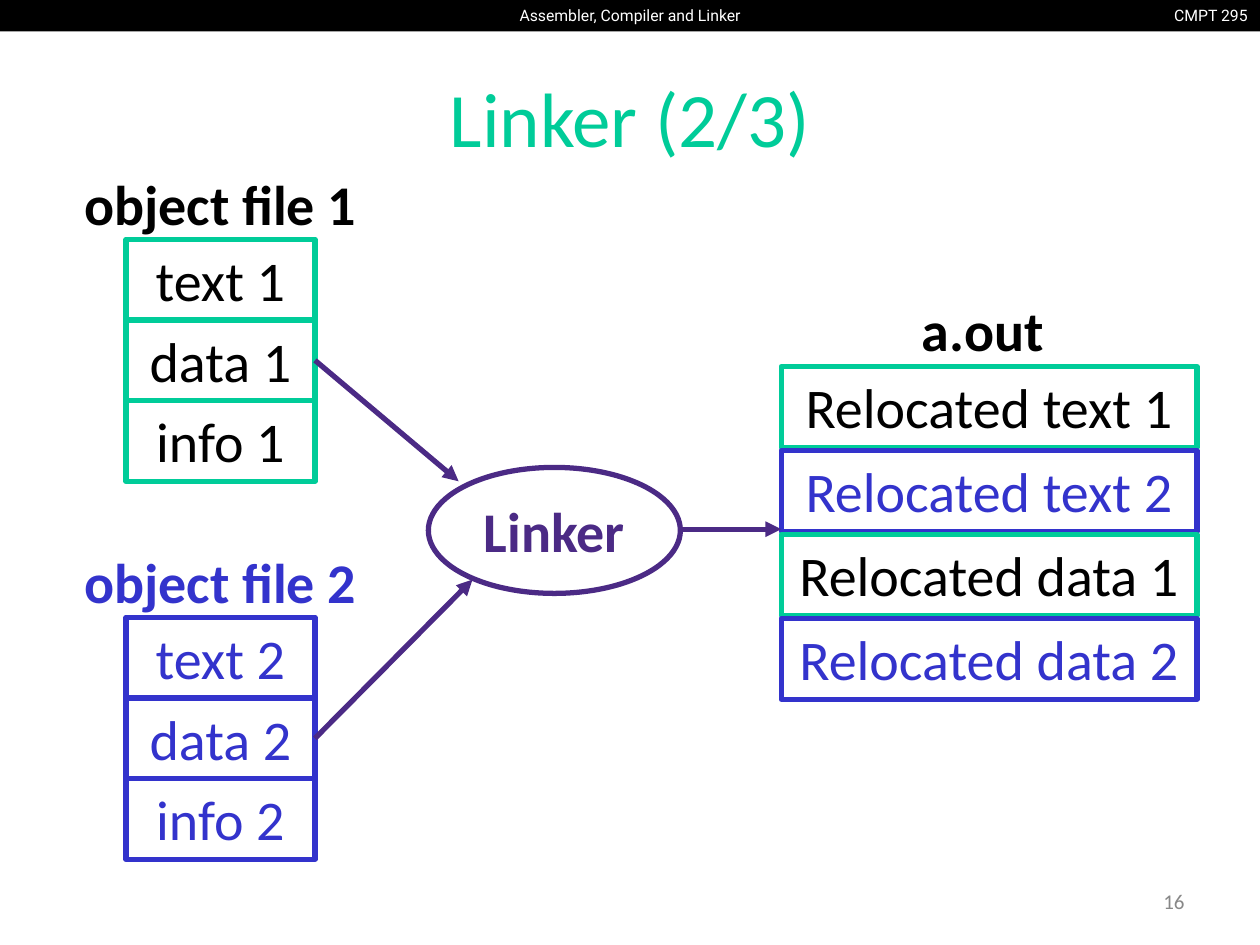
from lxml import etree
from pptx import Presentation
from pptx.dml.color import RGBColor
from pptx.enum.shapes import MSO_CONNECTOR, MSO_SHAPE
from pptx.enum.text import MSO_ANCHOR, PP_ALIGN
from pptx.oxml.ns import qn
from pptx.util import Inches, Pt

RECTANGLE, OVAL = MSO_SHAPE.RECTANGLE, MSO_SHAPE.OVAL
STRAIGHT = MSO_CONNECTOR.STRAIGHT
TOP, MIDDLE = MSO_ANCHOR.TOP, MSO_ANCHOR.MIDDLE
CENTER, RIGHT = PP_ALIGN.CENTER, PP_ALIGN.RIGHT

BLACK = RGBColor(0x00, 0x00, 0x00)
WHITE = RGBColor(0xFF, 0xFF, 0xFF)
GREEN = RGBColor(0x00, 0xCC, 0x99)
BLUE = RGBColor(0x33, 0x33, 0xCC)
PURPLE = RGBColor(0x4B, 0x2A, 0x85)
GRAY = RGBColor(0x88, 0x88, 0x88)

ROW_HEIGHT = 0.64
RIGHT_SIDE = 3

prs = Presentation()
prs.slide_width, prs.slide_height = Inches(10), Inches(7.5)
slide = prs.slides.add_slide(prs.slide_layouts[5])
shapes = slide.shapes


def write(shape, text, color, size=32, bold=False, align=CENTER, anchor=TOP,
          font="Calibri", wrap=True):
    frame = shape.text_frame
    frame.word_wrap = wrap
    frame.vertical_anchor = anchor
    paragraph = frame.paragraphs[0]
    paragraph.alignment = align
    run = paragraph.add_run()
    run.text = text
    run.font.name, run.font.size, run.font.bold = font, Pt(size), bold
    run.font.color.rgb = color


def add_outlined(kind, left, top, width, height, line_color):
    shape = shapes.add_shape(kind, Inches(left), Inches(top), Inches(width), Inches(height))
    shape.shadow.inherit = False
    shape.fill.background()
    shape.line.color.rgb = line_color
    shape.line.width = Pt(3)
    return shape


# Course header
header_bar = shapes.add_shape(RECTANGLE, 0, 0, Inches(10), Inches(0.25))
header_bar.shadow.inherit = False
header_bar.fill.solid()
header_bar.fill.fore_color.rgb = BLACK
header_bar.line.fill.background()

for text, left, width, height, align in [
    ("CMPT 295", 9.19, 0.81, 0.4, RIGHT),
    ("Assembler, Compiler and Linker", 4, 2, 0.25, CENTER),
]:
    header = shapes.add_textbox(Inches(left), 0, Inches(width), Inches(height))
    write(header, text, WHITE, size=9, align=align, font="Roboto", wrap=False)

# Title
title = shapes.title
title.left, title.top = Inches(0.5), Inches(0.3)
title.width, title.height = Inches(9), Inches(1.25)
write(title, "Linker (2/3)", GREEN, size=44, anchor=MIDDLE)

# Object files: a heading above three stacked sections
data_sections = []
for number, heading_top, line_color, text_color in [
    (1, 1.3, GREEN, BLACK),
    (2, 4.3, BLUE, BLUE),
]:
    heading = shapes.add_textbox(Inches(0.5), Inches(heading_top), Inches(2.5), Inches(ROW_HEIGHT))
    write(heading, f"object file {number}", text_color, bold=True)
    for row, name in enumerate(["text", "data", "info"]):
        section = add_outlined(RECTANGLE, 1, heading_top + 0.6 + row * ROW_HEIGHT,
                               1.5, ROW_HEIGHT, line_color)
        write(section, f"{name} {number}", text_color)
        if name == "data":
            data_sections.append(section)

# Linker
linker = add_outlined(OVAL, 3.4, 3.71, 2, 1, PURPLE)
write(linker, "Linker", PURPLE, bold=True, anchor=MIDDLE)

# Executable: sections of both files, interleaved
heading = shapes.add_textbox(Inches(6.2), Inches(2.3), Inches(3.2), Inches(ROW_HEIGHT))
write(heading, "a.out", BLACK, bold=True)
for row, (name, line_color, text_color) in enumerate([
    ("text 1", GREEN, BLACK),
    ("text 2", BLUE, BLUE),
    ("data 1", GREEN, BLACK),
    ("data 2", BLUE, BLUE),
]):
    section = add_outlined(RECTANGLE, 6.2, 2.91 + row * 2 / 3, 3.3, ROW_HEIGHT, line_color)
    write(section, f"Relocated {name}", text_color)

# Arrows into and out of the linker
for source, start, end in [
    (data_sections[0], (2.5, 2.86), (3.64, 3.82)),
    (data_sections[1], (2.5, 5.86), (3.75, 4.6)),
    (None, (5.4, 4.2), (6.2, 4.2)),
]:
    arrow = shapes.add_connector(STRAIGHT, *[Inches(value) for value in start + end])
    if source is not None:
        arrow.begin_connect(source, RIGHT_SIDE)
    arrow.line.color.rgb = PURPLE
    arrow.line.width = Pt(3)
    etree.SubElement(arrow.line._get_or_add_ln(), qn("a:tailEnd"), type="triangle")
    etree.SubElement(arrow._element.spPr, qn("a:effectLst"))

# Page number
page_number = shapes.add_textbox(Inches(7.17), Inches(6.95), Inches(2.33), Inches(0.4))
write(page_number, "16", GRAY, size=12, align=RIGHT, anchor=MIDDLE)

prs.save("out.pptx")
